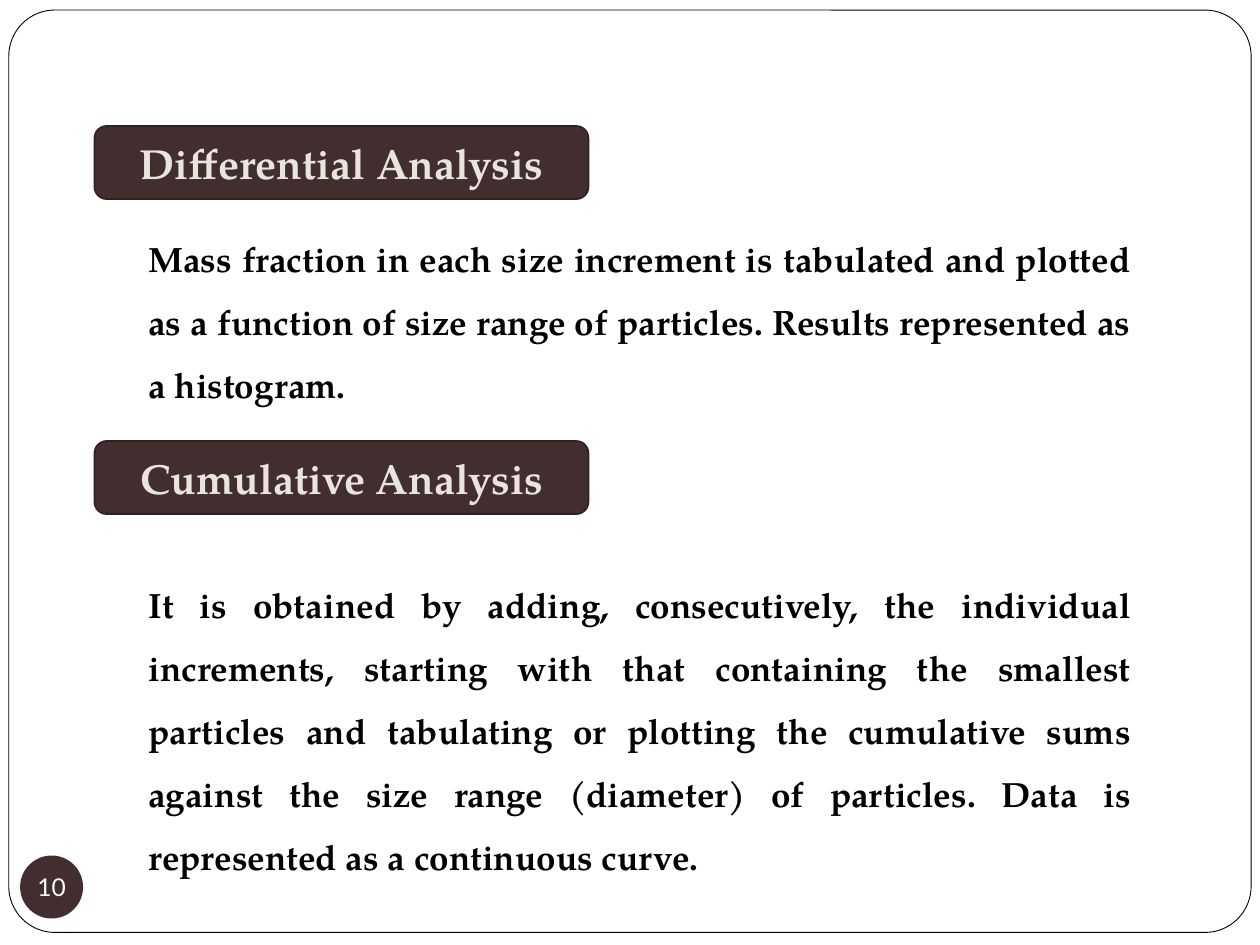
from pptx import Presentation
from pptx.dml.color import RGBColor
from pptx.enum.shapes import MSO_SHAPE as Shape
from pptx.enum.text import MSO_ANCHOR as Anchor, PP_ALIGN as Align
from pptx.util import Inches, Pt

BROWN = "422E2E"
SERIF = "TeX Gyre Pagella"


def add_panel(kind, left, top, width, height, fill, line=None, line_width=1):
    shape = slide.shapes.add_shape(
        kind, Inches(left), Inches(top), Inches(width), Inches(height))
    shape.shadow.inherit = False
    shape.fill.solid()
    shape.fill.fore_color.rgb = RGBColor.from_string(fill)
    if line:
        shape.line.color.rgb = RGBColor.from_string(line)
        shape.line.width = Pt(line_width)
    else:
        shape.line.fill.background()
    return shape


def add_text(paragraph, text, size, font, color, align, bold=False):
    paragraph.alignment = align
    run = paragraph.add_run()
    run.text = text
    run.font.size = Pt(size)
    run.font.name = font
    run.font.bold = bold
    run.font.color.rgb = RGBColor.from_string(color)


presentation = Presentation()
presentation.slide_width = Inches(10)
presentation.slide_height = Inches(7.5)
slide = presentation.slides.add_slide(presentation.slide_layouts[6])

# Rounded frame
frame = add_panel(Shape.ROUNDED_RECTANGLE, 0.07, 0.08, 9.86, 7.32,
                  "FFFFFF", "000000", 0.5)
frame.adjustments[0] = 0.05

# Slide number badge
badge = add_panel(Shape.OVAL, 0.16, 6.79, 0.5, 0.5, BROWN)
badge_text = badge.text_frame
badge_text.word_wrap = False
badge_text.vertical_anchor = Anchor.MIDDLE
badge_text.margin_left = badge_text.margin_right = 0
badge_text.margin_top = badge_text.margin_bottom = 0
add_text(badge_text.paragraphs[0], "10", 14, "Lato", "FFFFFF", Align.CENTER)

# Descriptions: text and space before; the second leaves room for its heading
descriptions = [
    ("Mass fraction in each size increment is tabulated and plotted as a "
     "function of size range of particles. Results represented as a "
     "histogram.", 5.8),
    ("It is obtained by adding, consecutively, the individual increments, "
     "starting with that containing the smallest particles and tabulating or "
     "plotting the cumulative sums against the size range (diameter) of "
     "particles. Data is represented as a continuous curve.", 89.4),
]
body = slide.shapes.add_textbox(
    Inches(1.08), Inches(1.67), Inches(8), Inches(3.17)).text_frame
body.word_wrap = True
for index, (text, space) in enumerate(descriptions):
    paragraph = body.add_paragraph() if index else body.paragraphs[0]
    paragraph.line_spacing = 1.5
    paragraph.space_before = Pt(space)
    add_text(paragraph, text, 20, SERIF, "000000", Align.JUSTIFY, bold=True)

# Headings
for title, top in [("Differential Analysis", 1), ("Cumulative Analysis", 3.5)]:
    heading = add_panel(Shape.ROUNDED_RECTANGLE, 0.75, top, 3.92, 0.58,
                        BROWN, "312222")
    heading.text_frame.word_wrap = True
    heading.text_frame.vertical_anchor = Anchor.MIDDLE
    add_text(heading.text_frame.paragraphs[0], title, 24, SERIF, "E9E5DC",
             Align.CENTER, bold=True)

presentation.save("out.pptx")
